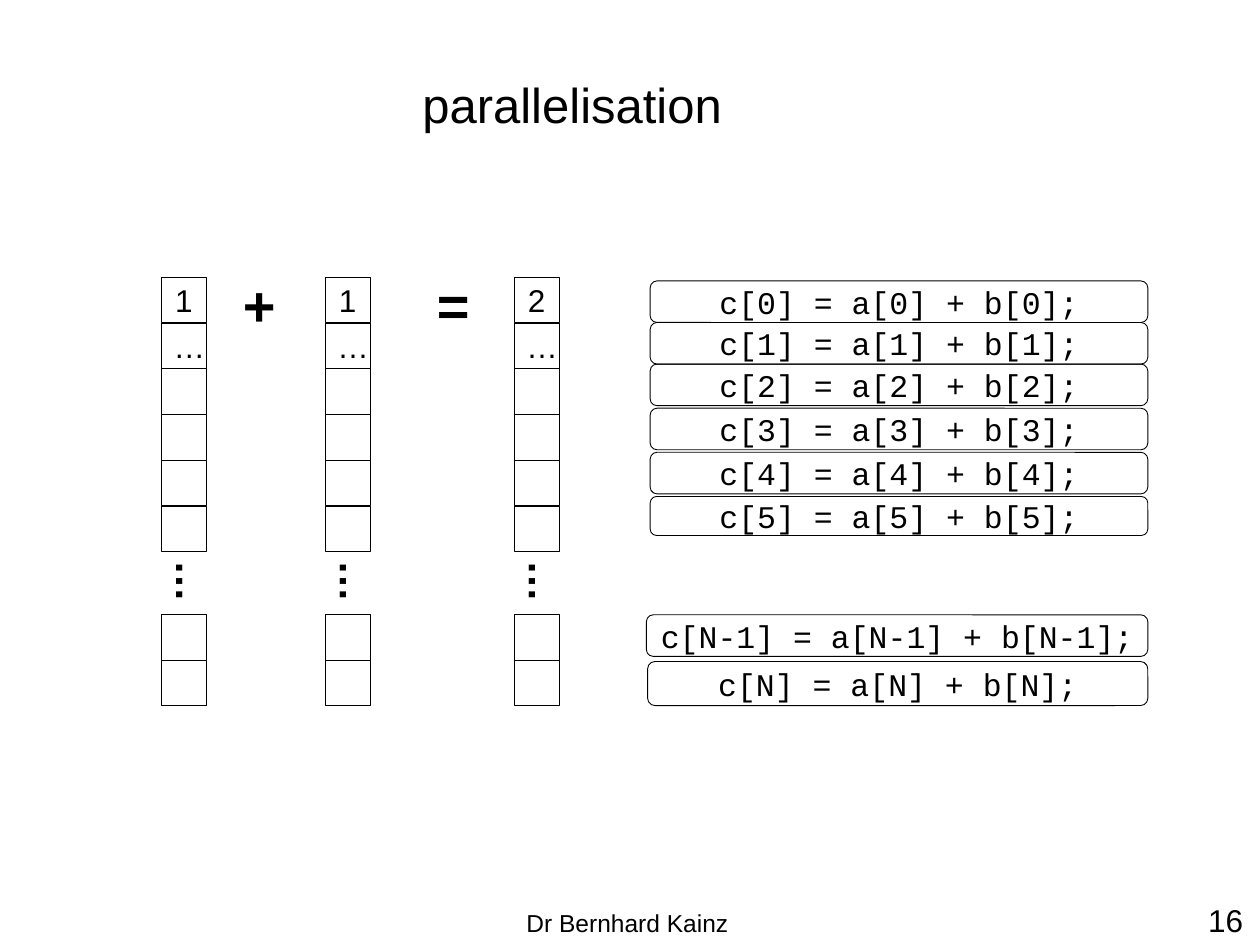
import dataclasses

import pptx
import pptx.dml.color
import pptx.enum.shapes
import pptx.enum.text
import pptx.util

SHAPES = pptx.enum.shapes.MSO_SHAPE
ALIGN = pptx.enum.text.PP_ALIGN
ANCHOR = pptx.enum.text.MSO_ANCHOR
FIT = pptx.enum.text.MSO_AUTO_SIZE


@dataclasses.dataclass(frozen=True)
class Theme:
    ink: pptx.dml.color.RGBColor = pptx.dml.color.RGBColor(0, 0, 0)
    sans: str = "Arial"
    code: str = "Courier New"
    title: int = 28
    sign: int = 32
    dots: int = 24
    body: int = 18
    foot: int = 14
    line: float = 0.5


THEME = Theme()

# Grid, in inches
CELL = 0.36
PITCH = 0.364
TOP = 2.2
TAIL = 4.88
COLS = [(1.28, "1"), (2.58, "1"), (4.08, "2")]
ROWS = [TOP + PITCH * row for row in range(6)]
ENDS = [TAIL, TAIL + CELL]
RIGHT = 9.11
STEPS = [
    ("0", 5.16, 2.23, 0.33),
    ("1", 5.16, 2.56, 0.33),
    ("2", 5.16, 2.89, 0.33),
    ("3", 5.16, 3.24, 0.33),
    ("4", 5.16, 3.59, 0.33),
    ("5", 5.16, 3.94, 0.31),
    ("N-1", 5.13, TAIL, 0.33),
    ("N", 5.14, 5.25, 0.35),
]


def inches(*sizes):
    return [pptx.util.Inches(size) for size in sizes]


def write(frame, text, size, face=THEME.sans, bold=False, align=ALIGN.LEFT):
    para = frame.paragraphs[0]
    para.text = text
    para.alignment = align
    font = para.font
    font.name, font.size, font.bold = face, pptx.util.Pt(size), bold
    font.color.rgb = THEME.ink


def add_box(slide, kind, area, text="", face=THEME.sans):
    """Draw an outlined, unfilled shape with centred text."""
    box = slide.shapes.add_shape(kind, *inches(*area))
    box.shadow.inherit = False
    box.fill.background()
    box.line.color.rgb = THEME.ink
    box.line.width = pptx.util.Pt(THEME.line)
    if text:
        box.text_frame.vertical_anchor = ANCHOR.MIDDLE
        write(box.text_frame, text, THEME.body, face, align=ALIGN.CENTER)


def add_label(slide, area, text, size, bold=False, turn=0):
    label = slide.shapes.add_textbox(*inches(*area))
    label.rotation = turn
    label.text_frame.word_wrap = False
    label.text_frame.auto_size = FIT.SHAPE_TO_FIT_TEXT
    write(label.text_frame, text, size, bold=bold)


def add_title(slide, text):
    title = slide.shapes.title
    title.left, title.top, title.width, title.height = inches(0.81, 0.25, 7.51, 1.15)
    frame = title.text_frame
    frame.margin_left, frame.margin_top, frame.margin_bottom = inches(0.05, 0.05, 0.05)
    frame.vertical_anchor = ANCHOR.MIDDLE
    write(frame, text, THEME.title, align=ALIGN.CENTER)


def add_array(slide, left, first):
    """Stack the cells of one array, with dots before its last two."""
    texts = [first, "…"] + [""] * 6
    for top, text in zip(ROWS + ENDS, texts):
        add_box(slide, SHAPES.RECTANGLE, (left, top, CELL, CELL), text)
    add_label(slide, (left - 0.02, 4.37, 0.54, 0.5), "…", THEME.dots, True, 90)


def add_step(slide, index, left, top, height):
    text = f"c[{index}] = a[{index}] + b[{index}];"
    area = (left, top, RIGHT - left, height)
    add_box(slide, SHAPES.ROUNDED_RECTANGLE, area, text, THEME.code)


def main():
    deck = pptx.Presentation()
    deck.slide_width, deck.slide_height = inches(10, 7.5)
    slide = deck.slides.add_slide(deck.slide_layouts[5])
    add_label(slide, (9.49, 7.1, 0.51, 0.4), "16", THEME.body)
    add_label(slide, (4.08, 7.16, 1.81, 0.34), "Dr Bernhard Kainz", THEME.foot)
    add_title(slide, "parallelisation")
    for left, first in COLS:
        add_array(slide, left, first)
    for left, sign in [(1.83, "+"), (3.37, "=")]:
        add_label(slide, (left, 2.1, 0.46, 0.64), sign, THEME.sign, True)
    for step in STEPS:
        add_step(slide, *step)
    deck.save("out.pptx")


if __name__ == "__main__":
    main()
